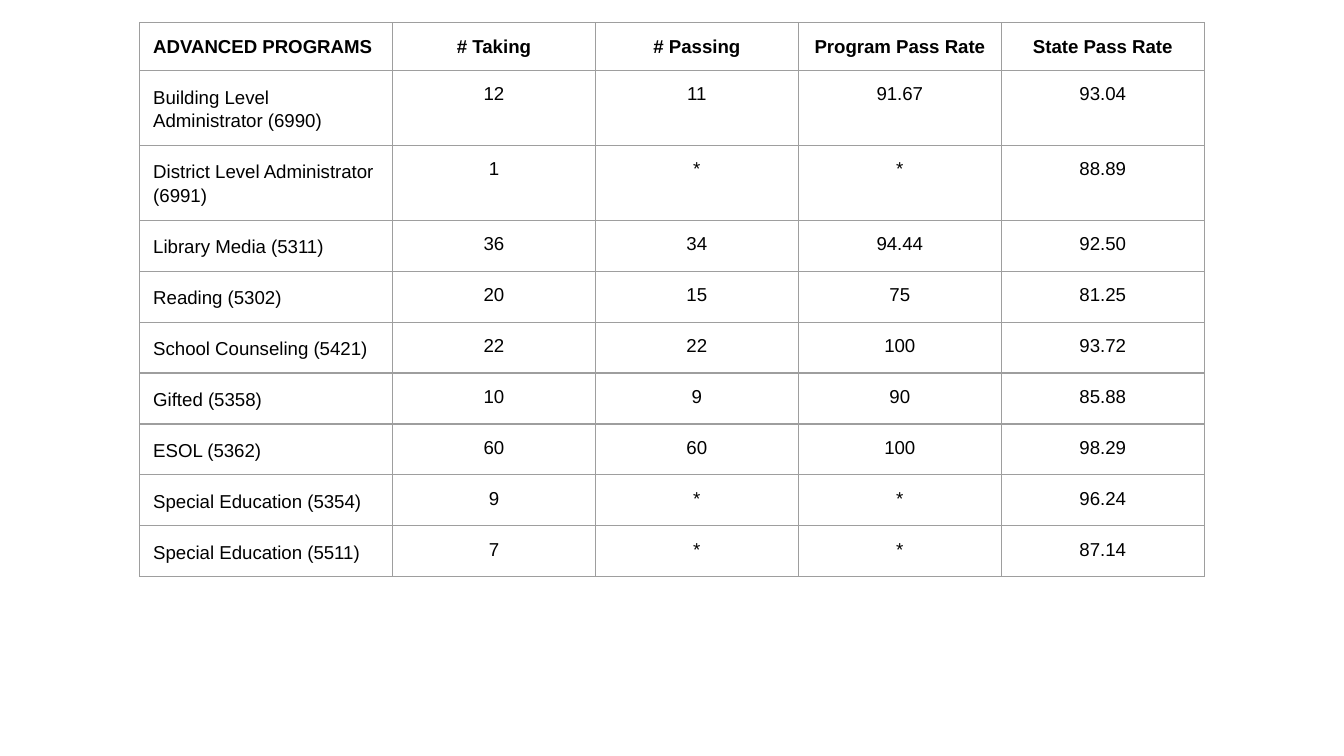
from lxml.etree import SubElement
from pptx import Presentation
from pptx.dml.color import RGBColor
from pptx.enum.text import PP_ALIGN
from pptx.oxml.ns import qn
from pptx.util import Inches, Pt

HEADERS = ("ADVANCED PROGRAMS", "# Taking", "# Passing", "Program Pass Rate", "State Pass Rate")
PROGRAMS = [
    ("Building Level Administrator (6990)", "12", "11", "91.67", "93.04"),
    ("District Level Administrator (6991)", "1", "*", "*", "88.89"),
    ("Library Media (5311)", "36", "34", "94.44", "92.50"),
    ("Reading (5302)", "20", "15", "75", "81.25"),
    ("School Counseling (5421)", "22", "22", "100", "93.72"),
    ("Gifted (5358)", "10", "9", "90", "85.88"),
    ("ESOL (5362)", "60", "60", "100", "98.29"),
    ("Special Education (5354)", "9", "*", "*", "96.24"),
    ("Special Education (5511)", "7", "*", "*", "87.14"),
]
COLORS = {"text": "000000", "border": "9E9E9E"}
FONT = "Arial"
SLIDE_WIDTH = Inches(10)
SLIDE_HEIGHT = SLIDE_WIDTH * 9 // 16
LEFT, TOP = 1.04, 0.17
NAME_WIDTH, VALUE_WIDTH = 1.88, 1.51
ROW_HEIGHT = 0.27
MARGIN = Inches(0.1)


def add_borders(cell):
    properties = cell._tc.get_or_add_tcPr()
    for side in ("lnL", "lnR", "lnT", "lnB"):
        line = SubElement(properties, qn(f"a:{side}"), w=str(Pt(0.75)))
        fill = SubElement(line, qn("a:solidFill"))
        SubElement(fill, qn("a:srgbClr"), val=COLORS["border"])


def format_cell(cell, text, is_header, is_name):
    add_borders(cell)
    cell.fill.background()
    cell.margin_left = cell.margin_right = MARGIN
    cell.margin_top = cell.margin_bottom = MARGIN
    cell.text_frame.text = text
    paragraph = cell.text_frame.paragraphs[0]
    paragraph.alignment = PP_ALIGN.LEFT if is_name else PP_ALIGN.CENTER
    if is_name and not is_header:
        paragraph.line_spacing = 1.15
    font = paragraph.runs[0].font
    font.name, font.size, font.bold = FONT, Pt(10), is_header
    font.color.rgb = RGBColor.from_string(COLORS["text"])


def main():
    presentation = Presentation()
    presentation.slide_width, presentation.slide_height = SLIDE_WIDTH, SLIDE_HEIGHT
    slide = presentation.slides.add_slide(presentation.slide_layouts[6])

    rows = [HEADERS, *PROGRAMS]
    widths = [NAME_WIDTH] + [VALUE_WIDTH] * (len(HEADERS) - 1)
    table = slide.shapes.add_table(
        len(rows), len(widths), Inches(LEFT), Inches(TOP),
        Inches(sum(widths)), Inches(ROW_HEIGHT * len(rows)),
    ).table
    table.horz_banding = False
    table.first_row = False
    for column, width in zip(table.columns, widths):
        column.width = Inches(width)
    for row_index, values in enumerate(rows):
        table.rows[row_index].height = Inches(ROW_HEIGHT)
        for column_index, text in enumerate(values):
            format_cell(table.cell(row_index, column_index), text,
                        is_header=row_index == 0, is_name=column_index == 0)

    presentation.save("out.pptx")


if __name__ == "__main__":
    main()
